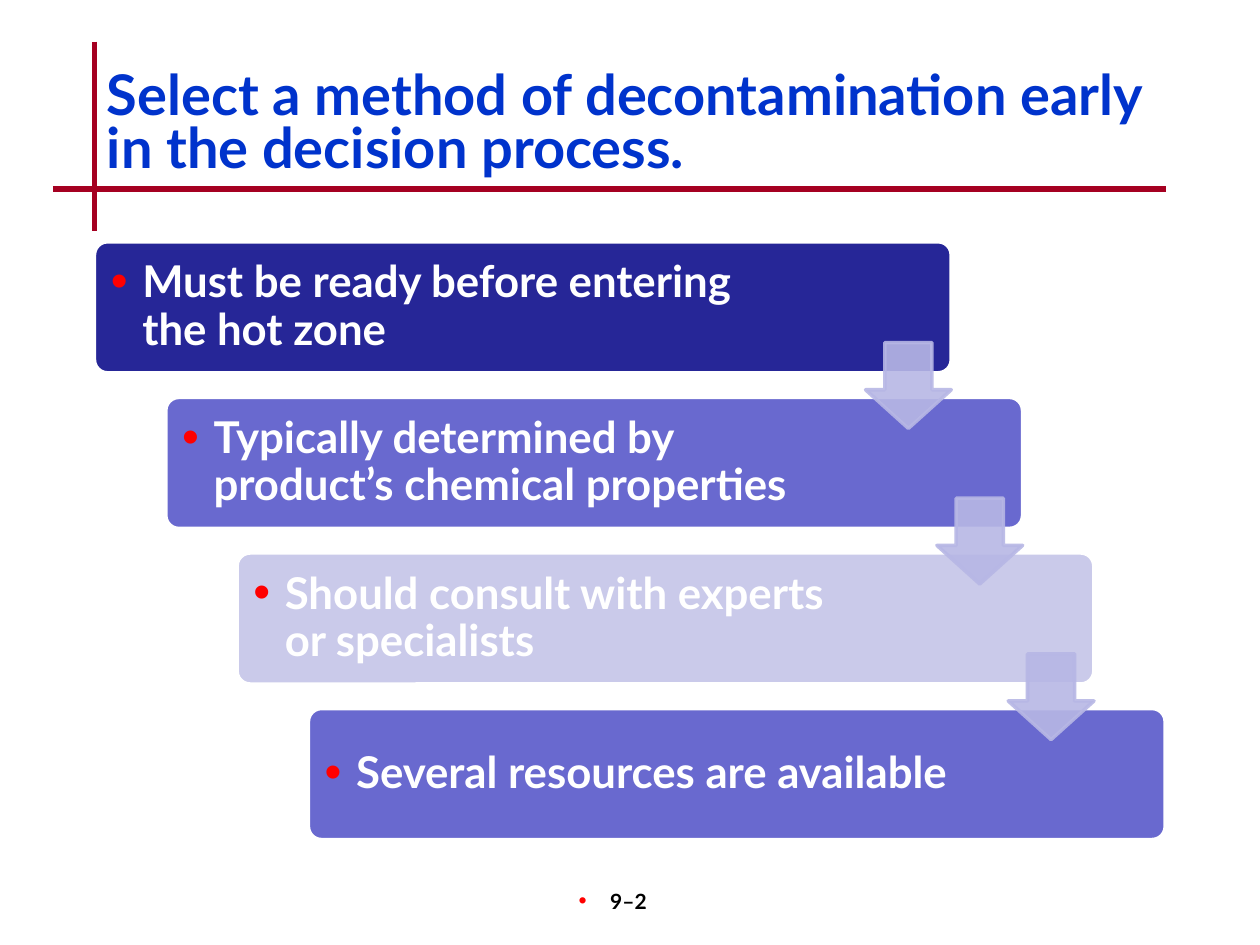
from pptx import Presentation
from pptx.dml.color import RGBColor
from pptx.enum import shapes, text
from pptx.oxml.ns import qn
from pptx.util import Pt
from lxml import etree

FONT = "Lato"
COLORS = {
    "navy": "262697", "violet": "6969CF", "pale": "CACAEA", "arrow": "B7B7E5",
    "rule": "A50021", "title": "0033CC", "bullet": "FF0000",
    "white": "FFFFFF", "black": "000000",
}
TITLE = "Select a method of decontamination early in the decision process."
STEPS = [  # text, card colour, text width
    ("Must be ready before entering \nthe hot zone", "navy", 401.8),
    ("Typically determined by \nproduct’s chemical properties", "violet", 395.3),
    ("Should consult with experts \nor specialists", "pale", 396),
    ("Several resources are available", "violet", 395.3),
]
PAGE = "9–2"
RULES = [(54, 23.8, 54, 131.8), (30.2, 108, 666, 108)]

CARD_X, CARD_Y, CARD_W, CARD_H = 54, 138.2, 489.6, 74.9
STEP_X, STEP_Y = 40.75, 88.9
PAD = 2.2
ARROW_X, ARROW_Y, ARROW = 440.6, 57.6, 49


def rgb(name):
    return RGBColor.from_string(COLORS[name])


def sub(parent, tag, **attrs):
    return etree.SubElement(parent, qn(tag), attrs)


def add_bullet(para, indent):
    props = para._p.get_or_add_pPr()
    props.set("marL", str(Pt(indent)))
    props.set("indent", str(-Pt(indent)))
    color = sub(props, "a:buClr")
    sub(color, "a:srgbClr", val=COLORS["bullet"])
    sub(props, "a:buSzPct", val="110000")
    sub(props, "a:buFont", typeface="Arial")
    sub(props, "a:buChar", char="•")


def add_text(slide, words, box, size, color, spacing=1.0, middle=True,
             center=False, bullet=False, insets=(7.2, 3.6, 7.2, 3.6)):
    frame = slide.shapes.add_textbox(*map(Pt, box)).text_frame
    frame.word_wrap = True
    frame.margin_left, frame.margin_top, frame.margin_right, frame.margin_bottom = map(Pt, insets)
    frame.vertical_anchor = text.MSO_ANCHOR.MIDDLE if middle else text.MSO_ANCHOR.TOP
    para = frame.paragraphs[0]
    para.text = words
    para.line_spacing = spacing
    para.alignment = text.PP_ALIGN.CENTER if center else text.PP_ALIGN.LEFT
    if bullet:
        add_bullet(para, 18)
    for run in para.runs:
        run.font.name, run.font.size, run.font.bold = FONT, Pt(size), True
        run.font.color.rgb = rgb(color)


def add_block(slide, kind, box, fill, line, adjust, alpha=None):
    block = slide.shapes.add_shape(kind, *map(Pt, box))
    block.shadow.inherit = False
    for i, value in enumerate(adjust):
        block.adjustments[i] = value
    block.fill.solid()
    block.fill.fore_color.rgb = rgb(fill)
    block.line.color.rgb = rgb(line)
    block.line.width = Pt(2)
    if alpha:
        for color in block._element.spPr.iter(qn("a:srgbClr")):
            sub(color, "a:alpha", val=str(alpha * 1000))


def add_rule(slide, ends):
    rule = slide.shapes.add_connector(shapes.MSO_CONNECTOR.STRAIGHT, *map(Pt, ends))
    rule.line.color.rgb = rgb("rule")
    rule.line.width = Pt(3)
    sub(rule._element.spPr, "a:effectLst")


def main():
    deck = Presentation()
    deck.slide_width, deck.slide_height = Pt(720), Pt(540)
    slide = deck.slides.add_slide(deck.slide_layouts[6])

    for ends in RULES:
        add_rule(slide, ends)

    spots = [(CARD_X + i * STEP_X, CARD_Y + i * STEP_Y) for i in range(len(STEPS))]
    for (x, y), (words, fill, width) in zip(spots, STEPS):
        add_block(slide, shapes.MSO_SHAPE.ROUNDED_RECTANGLE,
                  (x, y, CARD_W, CARD_H), fill, "white", [0.1])
        add_text(slide, words, (x + PAD, y + PAD, width, CARD_H - 2 * PAD), 25,
                 "white", spacing=0.9, bullet=True, insets=(7.2,) * 4)
    for x, y in spots[:-1]:
        add_block(slide, shapes.MSO_SHAPE.DOWN_ARROW,
                  (x + ARROW_X, y + ARROW_Y, ARROW, ARROW),
                  "arrow", "arrow", [0.55, 0.45], alpha=90)

    add_text(slide, TITLE, (54, 36, 612, 72), 32, "title", spacing=0.8)
    # The wider right inset offsets the bullet's indent, so the number stays centred.
    add_text(slide, PAGE, (282.2, 504, 149.8, 36), 12, "black", middle=False,
             center=True, bullet=True, insets=(7.2, 3.6, 21, 3.6))
    deck.save("out.pptx")


if __name__ == "__main__":
    main()
